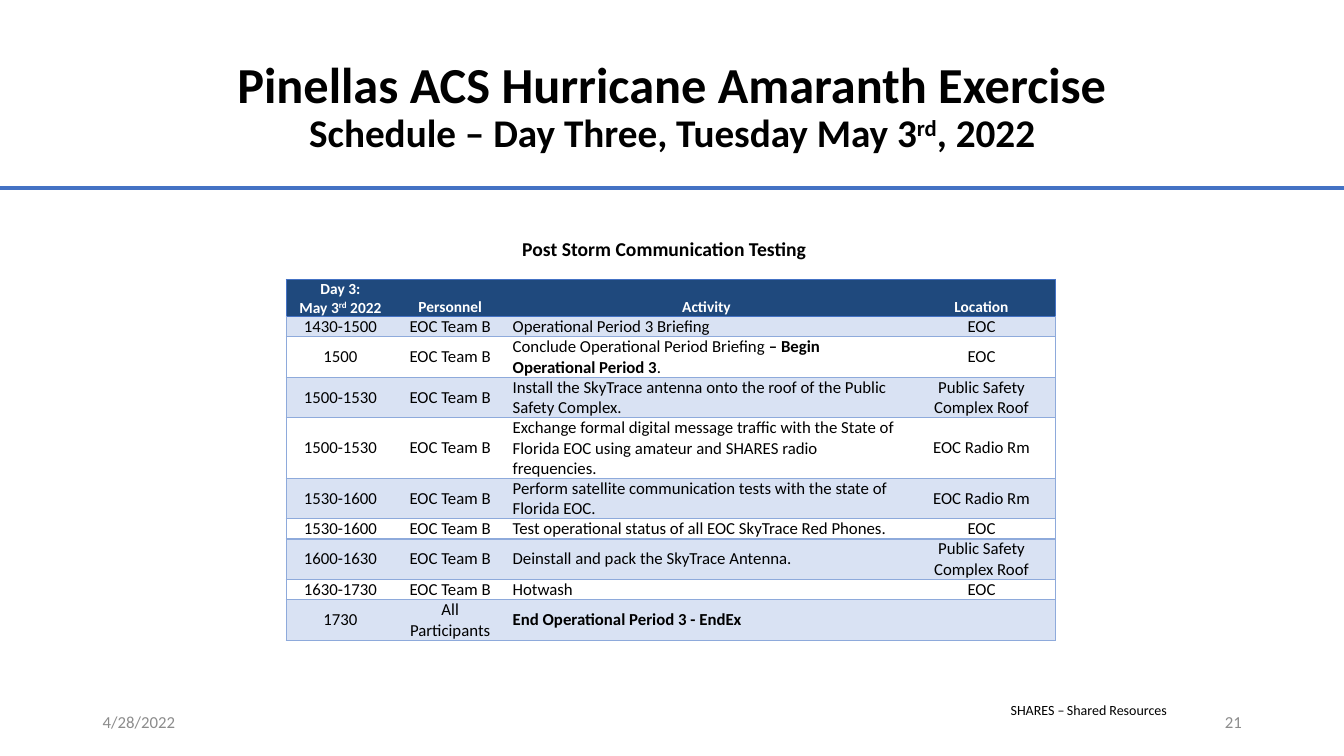
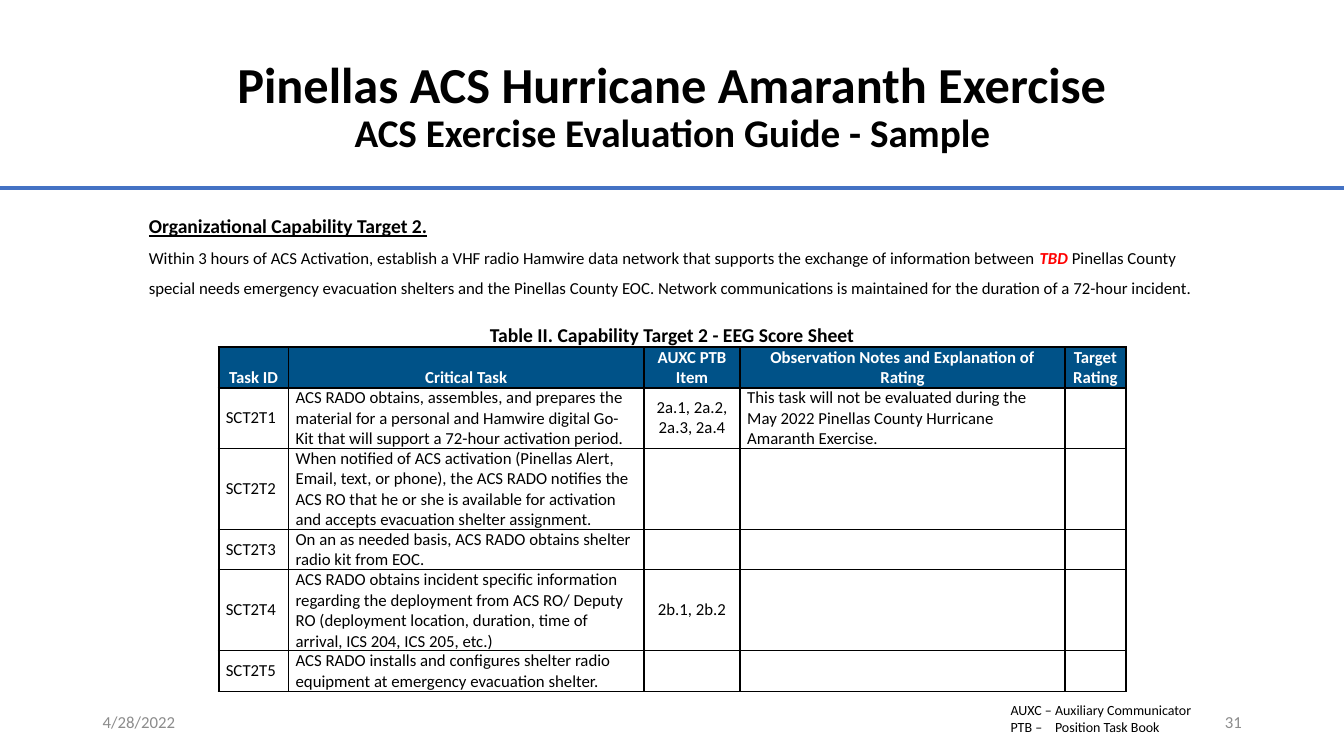
from copy import deepcopy
from dataclasses import dataclass, field
from typing import Optional, Sequence, Union

from lxml.etree import SubElement
from pptx import Presentation
from pptx.dml.color import RGBColor
from pptx.enum.shapes import MSO_CONNECTOR
from pptx.enum.text import MSO_ANCHOR, MSO_AUTO_SIZE, PP_ALIGN
from pptx.oxml.ns import qn
from pptx.util import Cm, Pt


@dataclass(frozen=True)
class Theme:
    font: str = "Calibri"
    ink: str = "000000"
    white: str = "FFFFFF"
    muted: str = "8C8C8C"
    alert: str = "FF0000"
    accent: str = "4472C4"
    navy: str = "1F497D"
    ocean: str = "005288"
    band: str = "D9E2F3"
    band_edge: str = "8EAADB"
    title: int = 36
    subtitle: int = 28
    heading: int = 14
    body: int = 12
    small_header: int = 11
    note: int = 10


THEME = Theme()
NO_STYLE = "{2D5ABB26-0587-4C30-8999-92F81FD0307C}"


@dataclass(frozen=True)
class Span:
    text: str
    size: Optional[int] = None
    color: Optional[str] = None
    bold: Optional[bool] = None
    italic: bool = False
    underline: bool = False
    superscript: bool = False


Rich = Union[str, Sequence[Span]]


@dataclass(frozen=True)
class Frame:
    left: float
    top: float
    width: float
    height: float

    def lengths(self) -> tuple:
        return Cm(self.left), Cm(self.top), Cm(self.width), Cm(self.height)


@dataclass(frozen=True)
class Column:
    header: Rich
    width: float
    align: PP_ALIGN = PP_ALIGN.CENTER
    anchor: MSO_ANCHOR = MSO_ANCHOR.MIDDLE


@dataclass(frozen=True)
class Row:
    lines: int
    cells: Sequence[Rich]


@dataclass(frozen=True)
class Grid:
    left: float
    top: float
    columns: Sequence[Column]
    rows: Sequence[Row]
    header_fill: str
    header_edge: str
    body_edge: str
    header_size: int = THEME.body
    outer: float = 1
    inner: Optional[float] = None
    band: Optional[str] = None
    caption: Optional[str] = None


@dataclass(frozen=True)
class Note:
    frame: Frame
    indent: float
    lines: Sequence[str] = field(default_factory=tuple)


def write(para, rich: Rich, size: int = THEME.body, color: str = THEME.ink,
          bold: bool = False, align: PP_ALIGN = PP_ALIGN.LEFT) -> None:
    para.alignment = align
    for item in [Span(rich)] if isinstance(rich, str) else rich:
        for index, piece in enumerate(item.text.split("\n")):
            if index:
                para.add_line_break()
                para._p[-1].append(deepcopy(span._r.rPr))
            if not piece:
                continue
            span = para.add_run()
            span.text = piece
            font = span.font
            font.name = THEME.font
            font.size = Pt(item.size or size)
            font.color.rgb = RGBColor.from_string(item.color or color)
            font.bold = bold if item.bold is None else item.bold
            font.italic = item.italic
            font.underline = item.underline
            if item.superscript:
                span._r.get_or_add_rPr().set("baseline", "30000")


def add_box(page, frame: Frame, anchor: MSO_ANCHOR = MSO_ANCHOR.TOP, wrap: bool = True):
    box = page.shapes.add_textbox(*frame.lengths()).text_frame
    box.word_wrap = wrap
    box.vertical_anchor = anchor
    return box


def add_page(deck, subtitle: Sequence[Span], number: str):
    page = deck.slides.add_slide(deck.slide_layouts[5])
    title = page.shapes.title
    title.left, title.top, title.width, title.height = Frame(4.47, 1.02, 24.94, 3.4).lengths()
    title.text_frame.auto_size = MSO_AUTO_SIZE.NONE
    title.text_frame.vertical_anchor = MSO_ANCHOR.MIDDLE
    para = title.text_frame.paragraphs[0]
    para.line_spacing = 0.9
    heading = Span("Pinellas ACS Hurricane Amaranth Exercise\n", THEME.title)
    write(para, [heading, *subtitle], THEME.subtitle, bold=True, align=PP_ALIGN.CENTER)

    rule = page.shapes.add_connector(
        MSO_CONNECTOR.STRAIGHT, 0, Cm(4.73), deck.slide_width, Cm(4.73))
    rule.line.color.rgb = RGBColor.from_string(THEME.accent)
    rule.line.width = Pt(3)
    SubElement(rule._element.spPr, qn("a:effectLst"))

    for text, left, align in (("4/28/2022", 2.34, PP_ALIGN.LEFT), (number, 23.93, PP_ALIGN.RIGHT)):
        box = add_box(page, Frame(left, 17.67, 7.62, 1.02), MSO_ANCHOR.MIDDLE)
        write(box.paragraphs[0], text, color=THEME.muted, align=align)
    return page


def set_edge(cell, side: str, color: str, width: Optional[float]) -> None:
    edge = SubElement(cell._tc.get_or_add_tcPr(), qn(f"a:ln{side}"))
    if width is None:
        edge.set("w", "0")
        SubElement(edge, qn("a:noFill"))
        return
    edge.set("w", str(Pt(width)))
    SubElement(SubElement(edge, qn("a:solidFill")), qn("a:srgbClr")).set("val", color)


def fill_cell(cell, fill: Optional[str], anchor: MSO_ANCHOR) -> None:
    if fill:
        cell.fill.solid()
        cell.fill.fore_color.rgb = RGBColor.from_string(fill)
    else:
        cell.fill.background()
    cell.margin_left = cell.margin_right = Cm(0.18)
    cell.margin_top = cell.margin_bottom = 0
    cell.vertical_anchor = anchor


def add_caption(table, grid: Grid) -> None:
    cell = table.cell(0, 0)
    cell.merge(table.cell(0, len(grid.columns) - 1))
    for part in table.rows[0].cells:
        set_edge(part, "B", grid.header_edge, grid.outer)
        fill_cell(part, None, MSO_ANCHOR.BOTTOM)
    write(cell.text_frame.paragraphs[0], grid.caption, THEME.heading, bold=True,
          align=PP_ALIGN.CENTER)


def add_grid(page, grid: Grid) -> None:
    header = Row(2, [column.header for column in grid.columns])
    rows = [header, *grid.rows]
    heights = [0.51 * row.lines for row in rows]
    heights[0] = 0.08 * grid.header_size
    first = 1 if grid.caption else 0
    if grid.caption:
        heights.insert(0, 0.6)
    last = len(grid.columns) - 1
    width = sum(column.width for column in grid.columns)
    frame = Frame(grid.left, grid.top, width, sum(heights))
    table = page.shapes.add_table(len(heights), last + 1, *frame.lengths()).table
    table.first_row = table.horz_banding = False
    table._tbl.tblPr.find(qn("a:tableStyleId")).text = NO_STYLE
    for index, height in enumerate(heights):
        table.rows[index].height = Cm(height)
    for index, column in enumerate(grid.columns):
        table.columns[index].width = Cm(column.width)
    if grid.caption:
        add_caption(table, grid)

    for r, row in enumerate(rows):
        is_header = r == 0
        edge = grid.header_edge if is_header else grid.body_edge
        for c, (column, rich) in enumerate(zip(grid.columns, row.cells)):
            cell = table.cell(r + first, c)
            set_edge(cell, "L", edge, grid.outer if c == 0 else grid.inner)
            set_edge(cell, "R", edge, grid.outer if c == last else grid.inner)
            set_edge(cell, "T", grid.header_edge if r < 2 else edge, grid.outer if r < 2 else 1)
            set_edge(cell, "B", edge, grid.outer if is_header else 1)
            para = cell.text_frame.paragraphs[0]
            if is_header:
                fill_cell(cell, grid.header_fill, MSO_ANCHOR.BOTTOM)
                write(para, rich, grid.header_size, THEME.white, True, PP_ALIGN.CENTER)
            else:
                fill_cell(cell, grid.band if r % 2 else None, column.anchor)
                write(para, rich, align=column.align)


def add_note(page, note: Note) -> None:
    box = add_box(page, note.frame, wrap=False)
    for index, line in enumerate(note.lines):
        para = box.add_paragraph() if index else box.paragraphs[0]
        properties = para._p.get_or_add_pPr()
        properties.set("marL", str(Cm(note.indent)))
        properties.set("indent", str(-Cm(note.indent)))
        write(para, line, THEME.note)


TEAM = "EOC Team B"
ROOF = "Public Safety Complex Roof"
RADIO_ROOM = "EOC Radio Rm"

SCHEDULE = Grid(
    7.21, 7.04,
    columns=[
        Column([Span("Day 3:\nMay 3"), Span("rd", superscript=True), Span(" 2022")], 2.74),
        Column("Personnel", 2.79),
        Column("Activity", 10.13, PP_ALIGN.LEFT),
        Column("Location", 3.73),
    ],
    rows=[
        Row(1, ["1430-1500", TEAM, "Operational Period 3 Briefing", "EOC"]),
        Row(2, ["1500", TEAM, [Span("Conclude Operational Period Briefing"),
                               Span(" – Begin Operational Period 3", bold=True),
                               Span(".")], "EOC"]),
        Row(2, ["1500-1530", TEAM, "Install the SkyTrace antenna onto the roof of the Public "
                "Safety Complex.", ROOF]),
        Row(3, ["1500-1530", TEAM, "Exchange formal digital message traffic with the State of "
                "Florida EOC using amateur and SHARES radio frequencies.", RADIO_ROOM]),
        Row(2, ["1530-1600", TEAM, "Perform satellite communication tests with the state of "
                "Florida EOC.", RADIO_ROOM]),
        Row(1, ["1530-1600", TEAM, "Test operational status of all EOC SkyTrace Red Phones.",
                "EOC"]),
        Row(2, ["1600-1630", TEAM, "Deinstall and pack the SkyTrace Antenna.", ROOF]),
        Row(1, ["1630-1730", TEAM, "Hotwash", "EOC"]),
        Row(2, ["1730", "All Participants",
                [Span("End Operational Period 3 - EndEx", bold=True)], ""]),
    ],
    header_fill=THEME.navy, header_edge=THEME.accent, body_edge=THEME.band_edge,
    header_size=THEME.small_header, band=THEME.band,
)

SCORE_SHEET = Grid(
    5.51, 8.15,
    columns=[
        Column("Task ID", 1.76, PP_ALIGN.LEFT),
        Column("Critical Task", 8.96, PP_ALIGN.LEFT, MSO_ANCHOR.TOP),
        Column("AUXC PTB Item", 2.42),
        Column("Observation Notes and Explanation of Rating", 8.19, PP_ALIGN.LEFT, MSO_ANCHOR.TOP),
        Column("Target Rating", 1.53),
    ],
    rows=[
        Row(3, ["SCT2T1", "ACS RADO obtains, assembles, and prepares the material for a personal "
                "and Hamwire digital Go-Kit that will support a 72-hour activation period.",
                "2a.1, 2a.2, 2a.3, 2a.4", "This task will not be evaluated during the May 2022 "
                "Pinellas County Hurricane Amaranth Exercise.", ""]),
        Row(4, ["SCT2T2", "When notified of ACS activation (Pinellas Alert, Email, text, or "
                "phone), the ACS RADO notifies the ACS RO that he or she is available for "
                "activation and accepts evacuation shelter assignment.", "", "", ""]),
        Row(2, ["SCT2T3", "On an as needed basis, ACS RADO obtains shelter radio kit from EOC.",
                "", "", ""]),
        Row(4, ["SCT2T4", "ACS RADO obtains incident specific information regarding the "
                "deployment from ACS RO/ Deputy RO (deployment location, duration, time of "
                "arrival, ICS 204, ICS 205, etc.)", "2b.1, 2b.2", "", ""]),
        Row(2, ["SCT2T5", "ACS RADO installs and configures shelter radio equipment at emergency "
                "evacuation shelter.", "", "", ""]),
    ],
    header_fill=THEME.ocean, header_edge=THEME.ink, body_edge=THEME.ink,
    outer=1.5, inner=1, caption="Table II. Capability Target 2 - EEG Score Sheet",
)


def build_schedule(deck) -> None:
    page = add_page(deck, [Span("Schedule – Day Three, Tuesday May 3"),
                           Span("rd", superscript=True), Span(", 2022")], "21")
    add_grid(page, SCHEDULE)
    add_note(page, Note(Frame(25.22, 17.55, 4.52, 0.69), 1.42, ["SHARES –\tShared Resources"]))
    box = add_box(page, Frame(9.96, 5.84, 13.56, 0.86))
    write(box.paragraphs[0], "Post Storm Communication Testing", THEME.heading, bold=True,
          align=PP_ALIGN.CENTER)


def build_evaluation(deck) -> None:
    page = add_page(deck, [Span("ACS Exercise Evaluation Guide - Sample")], "31")
    box = add_box(page, Frame(3.5, 4.98, 26.9, 2.62))
    heading, target = box.paragraphs[0], box.add_paragraph()
    heading.line_spacing = target.line_spacing = 1.5
    write(heading, [Span("Organizational Capability Target 2.", underline=True)],
          THEME.heading, bold=True)
    write(target, [
        Span("Within 3 hours of ACS Activation, establish a VHF radio Hamwire data network that "
             "supports the exchange of information between "),
        Span("TBD ", color=THEME.alert, bold=True, italic=True),
        Span("Pinellas County special needs emergency evacuation shelters and the Pinellas County "
             "EOC. Network communications is maintained for the duration of a 72-hour incident."),
    ])
    target.space_after = Pt(8)
    add_grid(page, SCORE_SHEET)
    add_note(page, Note(Frame(25.22, 17.55, 5.11, 1.12), 1.12,
                        ["AUXC –\tAuxiliary Communicator", "PTB –\tPosition Task Book"]))


def main() -> None:
    deck = Presentation()
    deck.slide_width, deck.slide_height = Cm(33.87), Cm(19.05)
    build_schedule(deck)
    build_evaluation(deck)
    deck.save("out.pptx")


if __name__ == "__main__":
    main()
